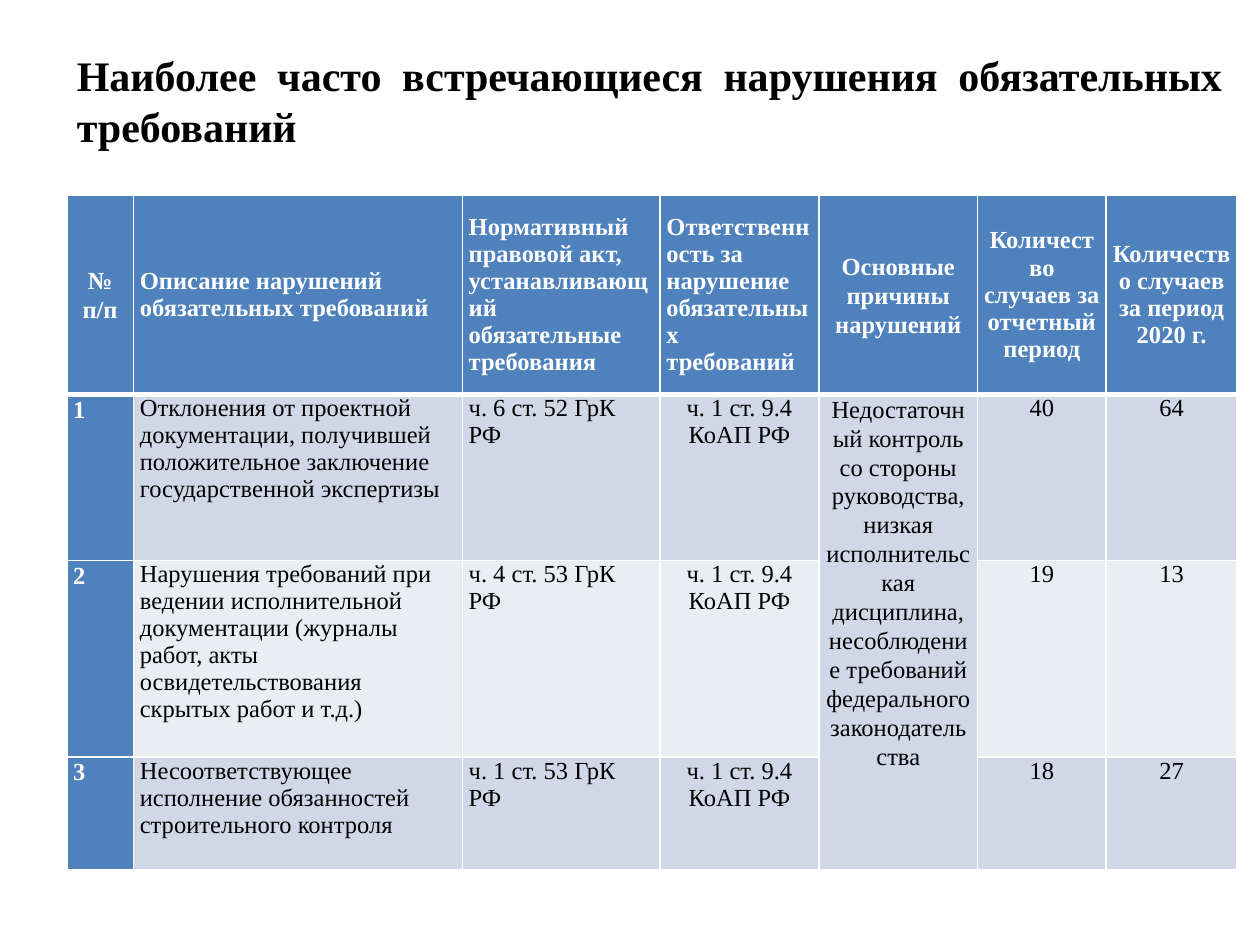
from dataclasses import dataclass

import pptx
import pptx.dml.color
import pptx.enum.text
import pptx.oxml
import pptx.oxml.ns
import pptx.util

RGBColor = pptx.dml.color.RGBColor
Align = pptx.enum.text.PP_ALIGN
Anchor = pptx.enum.text.MSO_ANCHOR
Inches = pptx.util.Inches

BLACK = RGBColor(0x00, 0x00, 0x00)
WHITE = RGBColor(0xFF, 0xFF, 0xFF)
BLUE = RGBColor(0x4F, 0x81, 0xBD)
BANDS = (RGBColor(0xD0, 0xD8, 0xE8), RGBColor(0xE9, 0xED, 0xF4))
FONT = "Times New Roman"
THIN, THICK = 1, 3  # border widths in points
ROW_HEIGHTS = (1.58, 1.32, 1.56, 0.89)


@dataclass(frozen=True)
class Column:
    width: float
    header: str
    header_align: Align
    body_align: Align
    values: tuple[str, ...]
    line_spacing: float | None = None


REASON_COLUMN = 4
COLUMNS = (
    Column(0.53, "№ п/п", Align.CENTER, Align.JUSTIFY, ("1", "2", "3"), 1.07),
    Column(2.61, "Описание нарушений обязательных требований", Align.LEFT, Align.LEFT, (
        "Отклонения от проектной документации, получившей положительное "
        "заключение государственной экспертизы",
        "Нарушения требований при ведении исполнительной документации "
        "(журналы работ, акты освидетельствования скрытых работ и т.д.)",
        "Несоответствующее исполнение обязанностей строительного контроля")),
    Column(1.57, "Нормативный правовой акт, устанавливающий обязательные требования",
           Align.LEFT, Align.LEFT,
           ("ч. 6 ст. 52 ГрК РФ", "ч. 4 ст. 53 ГрК РФ", "ч. 1 ст. 53 ГрК РФ")),
    Column(1.26, "Ответственность за нарушение обязательных требований",
           Align.LEFT, Align.CENTER, ("ч. 1 ст. 9.4 КоАП РФ",) * 3),
    Column(1.26, "Основные причины нарушений", Align.CENTER, Align.CENTER, (
        "Недостаточный контроль со стороны руководства, низкая исполнительская "
        "дисциплина, несоблюдение требований федерального законодательства",), 1.07),
    Column(1.02, "Количество случаев за отчетный период",
           Align.CENTER, Align.CENTER, ("40", "19", "18")),
    Column(1.04, "Количество случаев за период 2020 г.",
           Align.CENTER, Align.CENTER, ("64", "13", "27")),
)


def apply_format(target, values: dict) -> None:
    for name, value in values.items():
        setattr(target, name, value)


def write_text(frame, text: str, size: float, color: RGBColor, bold: bool,
               paragraph_format: dict) -> None:
    frame.text = text
    paragraph = frame.paragraphs[0]
    apply_format(paragraph, paragraph_format)
    for run in paragraph.runs:
        apply_format(run.font, {"name": FONT, "size": pptx.util.Pt(size), "bold": bold})
        run.font.color.rgb = color


def add_borders(cell, top: float, bottom: float) -> None:
    properties = cell._tc.get_or_add_tcPr()
    for side, width in (("L", THIN), ("R", THIN), ("T", top), ("B", bottom)):
        properties.append(pptx.oxml.parse_xml(
            f'<a:ln{side} {pptx.oxml.ns.nsdecls("a")} w="{pptx.util.Pt(width)}">'
            f'<a:solidFill><a:srgbClr val="{WHITE}"/></a:solidFill></a:ln{side}>'))


def fill_cell(cell, column: Column, column_index: int, row_index: int) -> None:
    is_header = row_index == 0
    is_strong = is_header or column_index == 0
    apply_format(cell, {
        "margin_left": Inches(0.05), "margin_right": Inches(0.05),
        "margin_top": 0, "margin_bottom": 0,
        "vertical_anchor": Anchor.MIDDLE if is_header else Anchor.TOP,
    })
    add_borders(cell, THICK if row_index == 1 else THIN, THICK if is_header else THIN)
    cell.fill.solid()
    cell.fill.fore_color.rgb = BLUE if is_strong else BANDS[(row_index - 1) % 2]
    texts = (column.header, *column.values)
    if row_index < len(texts):
        write_text(cell.text_frame, texts[row_index], 14,
                   WHITE if is_strong else BLACK, is_strong, {
                       "alignment": column.header_align if is_header else column.body_align,
                       "line_spacing": column.line_spacing})


def add_title(slide) -> None:
    title = slide.shapes.title
    apply_format(title, {"left": Inches(0.51), "top": Inches(0.29),
                         "width": Inches(9.29), "height": Inches(1.41)})
    apply_format(title.text_frame, {"word_wrap": True, "vertical_anchor": Anchor.MIDDLE,
                                    "auto_size": pptx.enum.text.MSO_AUTO_SIZE.NONE})
    # The closing line break lifts the heading above the table
    write_text(title.text_frame,
               "Наиболее часто встречающиеся нарушения обязательных требований\v",
               24, BLACK, True, {"alignment": Align.JUSTIFY})
    for line_break in title.text_frame.paragraphs[0]._p.findall(pptx.oxml.ns.qn("a:br")):
        line_break.append(pptx.oxml.parse_xml(
            f'<a:rPr {pptx.oxml.ns.nsdecls("a")} sz="2400"/>'))


def add_violations_table(slide) -> None:
    table = slide.shapes.add_table(
        len(ROW_HEIGHTS), len(COLUMNS), Inches(0.53), Inches(1.55),
        Inches(sum(column.width for column in COLUMNS)), Inches(sum(ROW_HEIGHTS))).table
    table.first_col = True
    for row, height in zip(table.rows, ROW_HEIGHTS):
        row.height = Inches(height)
    for column_index, column in enumerate(COLUMNS):
        table.columns[column_index].width = Inches(column.width)
        for row_index in range(len(ROW_HEIGHTS)):
            fill_cell(table.cell(row_index, column_index), column, column_index, row_index)
    # One shared reason for every violation
    table.cell(1, REASON_COLUMN).merge(table.cell(len(ROW_HEIGHTS) - 1, REASON_COLUMN))


def main() -> None:
    presentation = pptx.Presentation()
    apply_format(presentation, {"slide_width": Inches(10), "slide_height": Inches(7.5)})
    slide = presentation.slides.add_slide(presentation.slide_layouts.get_by_name("Title Only"))
    add_title(slide)
    add_violations_table(slide)
    presentation.save("out.pptx")


if __name__ == "__main__":
    main()
